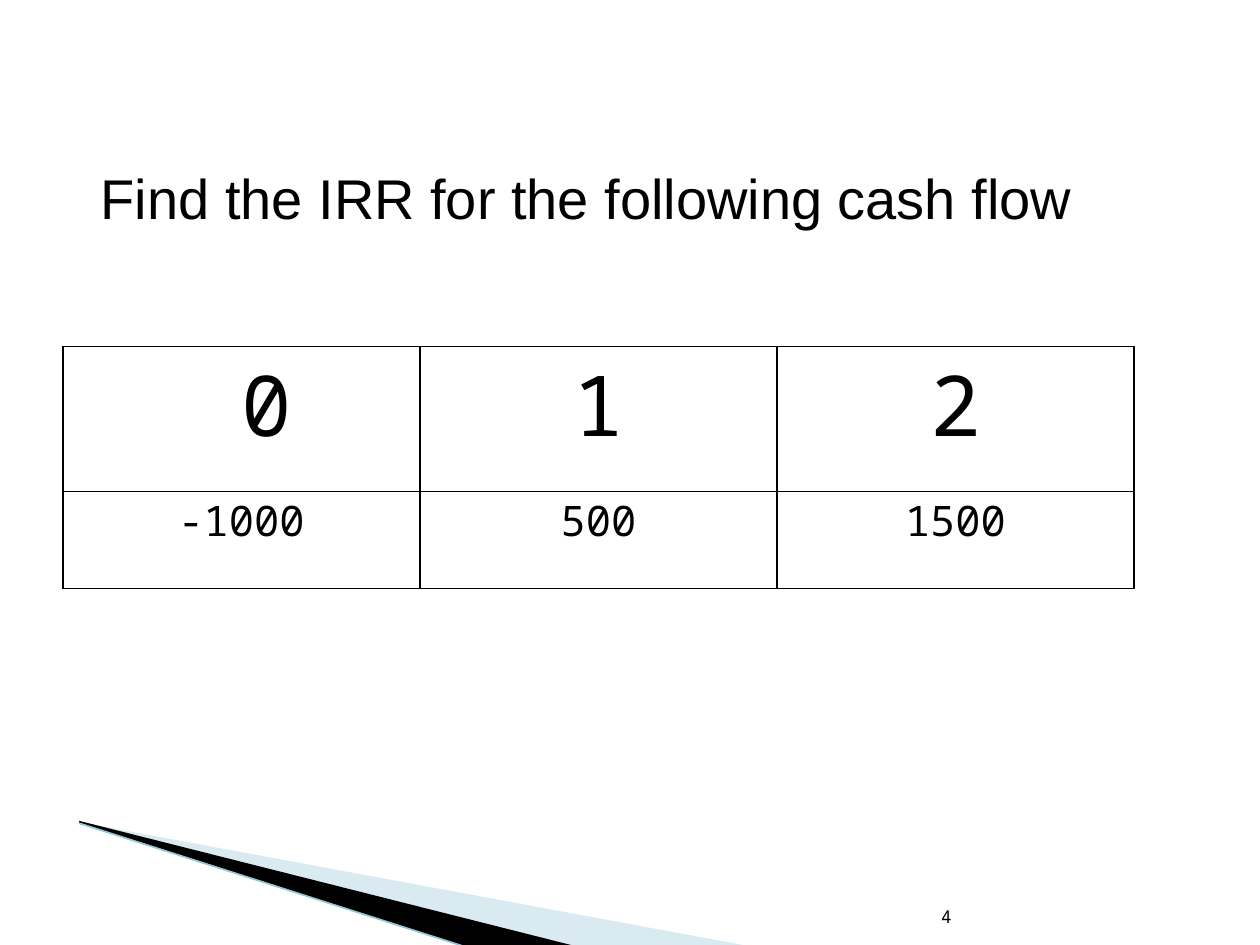
from lxml import etree
from pptx import Presentation
from pptx import util as u
from pptx.dml.color import RGBColor
from pptx.enum import shapes, text
from pptx.oxml import ns

Inches, Pt = u.Inches, u.Pt
COLORS = {"black": "000000", "white": "FFFFFF", "pale": "A0CBDC", "edge": "97C5D8"}
MONO = "Noto Sans Mono"


def color(name):
    return RGBColor.from_string(COLORS[name])


def style(para, size, font):
    for span in para.runs:
        span.font.size = Pt(size)
        span.font.name = font
        span.font.color.rgb = color("black")


deck = Presentation()
deck.slide_width, deck.slide_height = Inches(10), Inches(7.5)
page = deck.slides.add_slide(deck.slide_layouts[5])

# Title
title = page.shapes.title
title.left, title.top, title.width, title.height = map(Inches, (0.58, 1.25, 8.1, 0.64))
frame = title.text_frame
frame.text = "Find the IRR for the following cash flow"
frame.word_wrap = False
frame.auto_size = text.MSO_AUTO_SIZE.NONE
frame.vertical_anchor = text.MSO_ANCHOR.TOP
frame.margin_left = Inches(0.22)
frame.paragraphs[0].alignment = text.PP_ALIGN.LEFT
style(frame.paragraphs[0], 32, "Arial")

# Corner wedges
wedges = [
    ("pale", 40, [(0.55, 6.51), (5.95, 7.51), (4.56, 7.51), (0.55, 6.5)]),
    ("black", 100, [(0.53, 6.49), (4.57, 7.51), (3.72, 7.52), (0.54, 6.5)]),
]
for fill, opacity, corners in wedges:
    points = [(Inches(x), Inches(y)) for x, y in corners]
    builder = page.shapes.build_freeform(*points[0])
    builder.add_line_segments(points[1:])
    wedge = builder.convert_to_shape()
    wedge.shadow.inherit = False
    wedge.fill.solid()
    wedge.fill.fore_color.rgb = color(fill)
    wedge.line.fill.background()
    if opacity < 100:
        tint = wedge.fill._xPr.find(".//" + ns.qn("a:srgbClr"))
        etree.SubElement(tint, ns.qn("a:alpha"), val=str(opacity * 1000))

# Edge line along the wedges
edge = page.shapes.add_connector(
    shapes.MSO_CONNECTOR.STRAIGHT, Inches(-0.01), Inches(6.33), Inches(3.71), Inches(7.52))
edge.line.color.rgb = color("edge")
edge.line.width = Pt(0.95)
etree.SubElement(edge._element.spPr, ns.qn("a:effectLst"))

# White margin strip
strip = page.shapes.add_shape(
    shapes.MSO_SHAPE.RECTANGLE, 0, 0, Inches(0.62), Inches(7.48))
strip.shadow.inherit = False
strip.fill.solid()
strip.fill.fore_color.rgb = color("white")
strip.line.color.rgb = color("white")
strip.line.width = Pt(0.75)

# Page number
number = page.shapes.add_textbox(Inches(7.36), Inches(7.01), Inches(2.1), Inches(0.4))
frame = number.text_frame
frame.text = "4"
frame.word_wrap = True
frame.vertical_anchor = text.MSO_ANCHOR.BOTTOM
frame.margin_left = frame.margin_right = Inches(0.11)
style(frame.paragraphs[0], 10, MONO)

# Cash flow table: periods above amounts
rows = [(1.15, 48, ["0", "1", "2"]), (0.77, 24, ["-1000", "500", "1500"])]
table = page.shapes.add_table(
    2, 3, Inches(0.5), Inches(2.75), Inches(8.5), Inches(1.92)).table
table.first_row = table.horz_banding = False
for r, (height, size, values) in enumerate(rows):
    table.rows[r].height = Inches(height)
    for c, value in enumerate(values):
        cell = table.cell(r, c)
        cell.text = value
        cell.margin_left = cell.margin_right = Inches(0.07)
        cell.margin_top = cell.margin_bottom = 0
        para = cell.text_frame.paragraphs[0]
        para.alignment = text.PP_ALIGN.CENTER
        style(para, size, MONO)
        for side in ("lnL", "lnR", "lnT", "lnB"):
            border = etree.SubElement(
                cell._tc.get_or_add_tcPr(), ns.qn("a:" + side), w=str(Pt(1)))
            paint = etree.SubElement(border, ns.qn("a:solidFill"))
            etree.SubElement(paint, ns.qn("a:srgbClr"), val=COLORS["black"])
        cell.fill.background()
# The first period sits slightly right of centre
table.cell(0, 0).margin_left = Inches(0.47)

deck.save("out.pptx")
